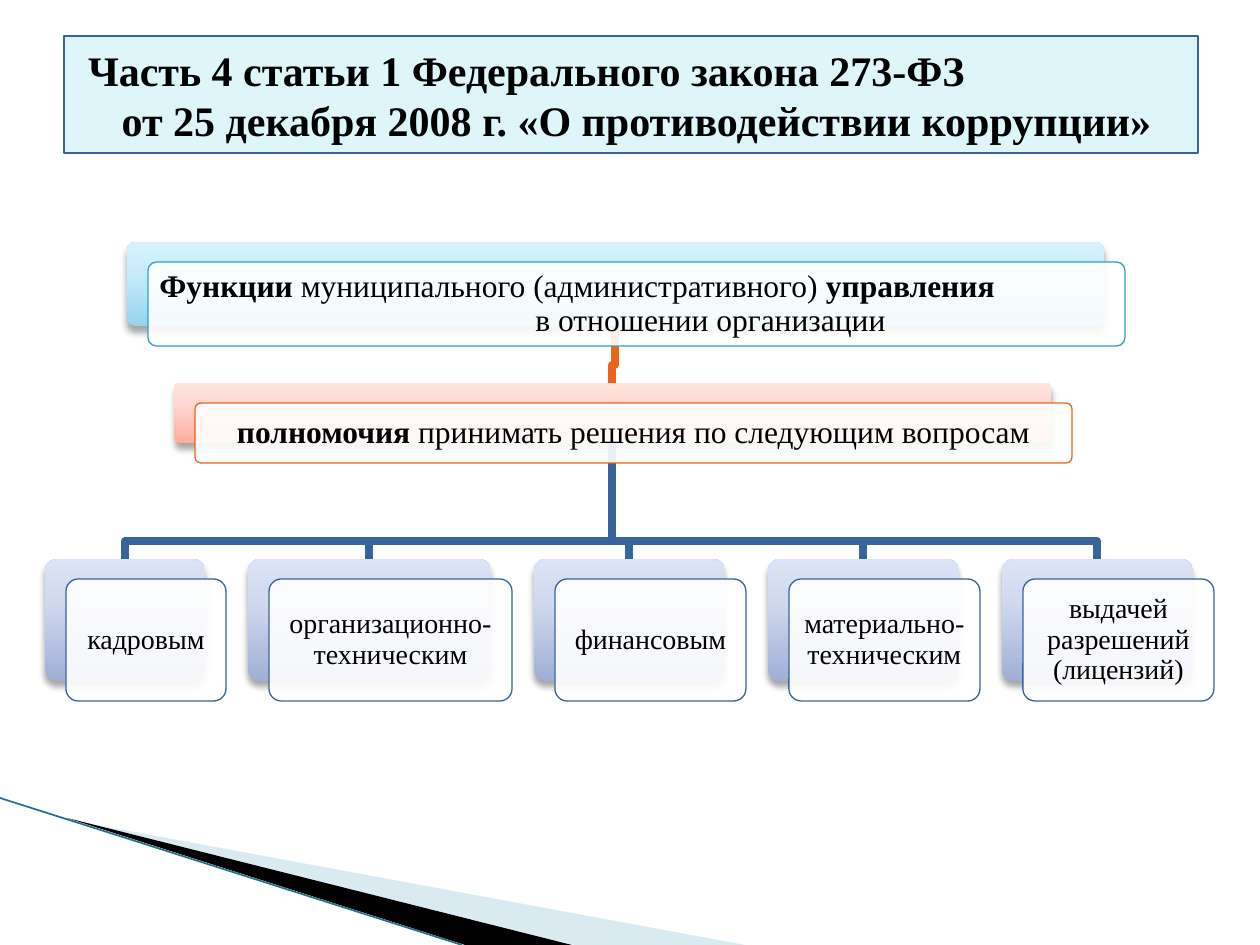
from lxml.etree import SubElement
from pptx import Presentation
from pptx.dml.color import RGBColor
from pptx.enum.shapes import MSO_CONNECTOR, MSO_SHAPE
from pptx.enum.text import MSO_ANCHOR, MSO_AUTO_SIZE, PP_ALIGN
from pptx.oxml import parse_xml
from pptx.oxml.ns import nsdecls, qn
from pptx.util import Emu, Pt

EMU_PER_PX = 914400 / 126
FONT = "Times New Roman"
BLACK = RGBColor(0x00, 0x00, 0x00)
WHITE = RGBColor(0xFF, 0xFF, 0xFF)
TITLE_FILL = RGBColor(0xDE, 0xF5, 0xFA)
NAVY = RGBColor(0x39, 0x63, 0x9D)
TEAL = RGBColor(0x2D, 0xA2, 0xBF)
ORANGE = RGBColor(0xEB, 0x64, 0x1B)
PALE_BLUE = RGBColor(0xA0, 0xCB, 0xDC)
EDGE_TEAL = RGBColor(0x1B, 0x75, 0x87)
SKY_STOPS = (RGBColor(0x96, 0xD4, 0xEE), RGBColor(0xC9, 0xEC, 0xFC), RGBColor(0xD7, 0xF2, 0xFF))
CORAL_STOPS = (RGBColor(0xFF, 0xAC, 0x9C), RGBColor(0xFF, 0xD8, 0xD2), RGBColor(0xFF, 0xE4, 0xDF))
LILAC_STOPS = (RGBColor(0x9F, 0xAF, 0xD6), RGBColor(0xD0, 0xD9, 0xEF), RGBColor(0xDC, 0xE3, 0xF6))


def px(length):
    return Emu(round(length * EMU_PER_PX))


def write_text(shape, lines, size, bold=False, inset=9, spacing=None):
    frame = shape.text_frame
    frame.word_wrap = True
    frame.auto_size = MSO_AUTO_SIZE.NONE
    frame.vertical_anchor = MSO_ANCHOR.MIDDLE
    frame.margin_left = frame.margin_right = px(inset)
    frame.margin_top = frame.margin_bottom = px(min(inset, 9))
    for index, (indent, runs) in enumerate(lines):
        paragraph = frame.add_paragraph() if index else frame.paragraphs[0]
        paragraph.alignment = PP_ALIGN.CENTER if indent is None else PP_ALIGN.LEFT
        if indent:
            paragraph._p.get_or_add_pPr().set("marL", str(px(indent)))
        if spacing:
            paragraph.line_spacing = spacing
        for words, strong in runs:
            run = paragraph.add_run()
            run.text = words
            run.font.name = FONT
            run.font.size = Pt(size)
            run.font.bold = bold or strong
            run.font.color.rgb = BLACK


def set_alpha(shape, percent):
    color = shape.fill._xPr.find(qn("a:solidFill"))[0]
    SubElement(color, qn("a:alpha")).set("val", str(percent * 1000))


def set_gradient(shape, colors):
    stops = "".join(
        f'<a:gs pos="{position}000"><a:srgbClr val="{color}"/></a:gs>'
        for position, color in zip((0, 65, 100), colors))
    shape._element.spPr.find(qn("a:prstGeom")).addnext(parse_xml(
        f'<a:gradFill {nsdecls("a")} rotWithShape="1"><a:gsLst>{stops}</a:gsLst>'
        '<a:lin ang="16200000" scaled="0"/></a:gradFill>'))


def add_drop_shadow(shape):
    shape._element.spPr.find(qn("a:effectLst")).append(parse_xml(
        f'<a:outerShdw {nsdecls("a")} blurRad="{Pt(4)}" dist="{Pt(3)}" dir="5400000" '
        'rotWithShape="0"><a:srgbClr val="000000"><a:alpha val="35000"/></a:srgbClr></a:outerShdw>'))


def add_outline(slide, points, close):
    builder = slide.shapes.build_freeform(*points[0], scale=EMU_PER_PX)
    builder.add_line_segments(points[1:], close=close)
    outline = builder.convert_to_shape()
    outline.shadow.inherit = False
    return outline


def add_panel(slide, left, top, width, height):
    panel = slide.shapes.add_shape(
        MSO_SHAPE.ROUNDED_RECTANGLE, px(left), px(top), px(width), px(height))
    panel.adjustments[0] = 0.1
    panel.shadow.inherit = False
    return panel


def add_card(slide, box, stops, edge, lines, size):
    left, top, width, height = box
    back = add_panel(slide, left, top, width, height)
    set_gradient(back, stops)
    back.line.fill.background()
    add_drop_shadow(back)
    front = add_panel(slide, left + 21, top + 20, width, height)
    front.fill.solid()
    front.fill.fore_color.rgb = WHITE
    set_alpha(front, 90)
    front.line.color.rgb = edge
    front.line.width = Pt(0.75)
    write_text(front, lines, size, spacing=0.9)


def add_branch(slide, parent, child, color):
    start_x = parent[0] + parent[2] // 2
    end_x = child[0] + child[2] // 2
    bend_y = child[1] - 18
    branch = add_outline(slide, [
        (start_x, parent[1] + parent[3]), (start_x, bend_y),
        (end_x, bend_y), (end_x, child[1])], close=False)
    branch.fill.background()
    branch.line.color.rgb = color
    branch.line.width = Pt(4.33)
    SubElement(branch.line._get_or_add_ln(), qn("a:round"))


def add_corner_decor(slide, left, top):
    wedges = (
        ([(69, 22), (745, 147), (575, 147)], PALE_BLUE, 40),
        ([(67, 20), (572, 147), (465, 147)], BLACK, 100))
    for points, color, opacity in wedges:
        wedge = add_outline(slide, [(left + x, top + y) for x, y in points], close=True)
        wedge.fill.solid()
        wedge.fill.fore_color.rgb = color
        set_alpha(wedge, opacity)
        wedge.line.fill.background()
    edge = slide.shapes.add_connector(
        MSO_CONNECTOR.STRAIGHT, px(left), px(top), px(left + 462), px(top + 147))
    edge.line.color.rgb = EDGE_TEAL
    edge.line.width = Pt(0.95)
    SubElement(edge._element.spPr, qn("a:effectLst"))


def add_title(slide, left, top, width, height):
    title = slide.shapes.title
    title.left, title.top, title.width, title.height = map(px, (left, top, width, height))
    title.fill.solid()
    title.fill.fore_color.rgb = TITLE_FILL
    title.line.color.rgb = NAVY
    title.line.width = Pt(0.75)
    write_text(title, [
        (11, [("Часть 4 статьи 1 Федерального закона 273-ФЗ", True)]),
        (None, [("от 25 декабря 2008 г. «О противодействии коррупции»", True)])],
        24, bold=True, inset=13)


def add_hierarchy(slide, left, top):
    functions_box = (left + 82, top, 977, 84)
    powers_box = (left + 129, top + 141, 877, 60)
    topics = (
        ("кадровым", 160), ("организационно-техническим", 243), ("финансовым", 191),
        ("материально-техническим", 191), ("выдачей разрешений (лицензий)", 191))
    topic_boxes = []
    topic_left = left
    for _, width in topics:
        topic_boxes.append((topic_left, top + 317, width, 122))
        topic_left += width + 43

    for topic_box in reversed(topic_boxes):
        add_branch(slide, powers_box, topic_box, NAVY)
    add_branch(slide, functions_box, powers_box, ORANGE)

    add_card(slide, functions_box, SKY_STOPS, TEAL, [
        (0, [("Функции", True), (" муниципального (административного) ", False),
             ("управления", True)]),
        (376, [("в отношении организации", False)])], 18)
    add_card(slide, powers_box, CORAL_STOPS, ORANGE, [
        (None, [("полномочия", True),
                (" принимать решения по следующим вопросам", False)])], 18)
    for (topic, _), topic_box in zip(topics, topic_boxes):
        add_card(slide, topic_box, LILAC_STOPS, NAVY, [(None, [(topic, False)])], 16)


def main():
    presentation = Presentation()
    presentation.slide_width, presentation.slide_height = px(1260), px(945)
    slide = presentation.slides.add_slide(presentation.slide_layouts[5])
    add_corner_decor(slide, 0, 798)
    add_hierarchy(slide, 45, 242)
    add_title(slide, 64, 36, 1134, 117)
    presentation.save("out.pptx")


if __name__ == "__main__":
    main()
